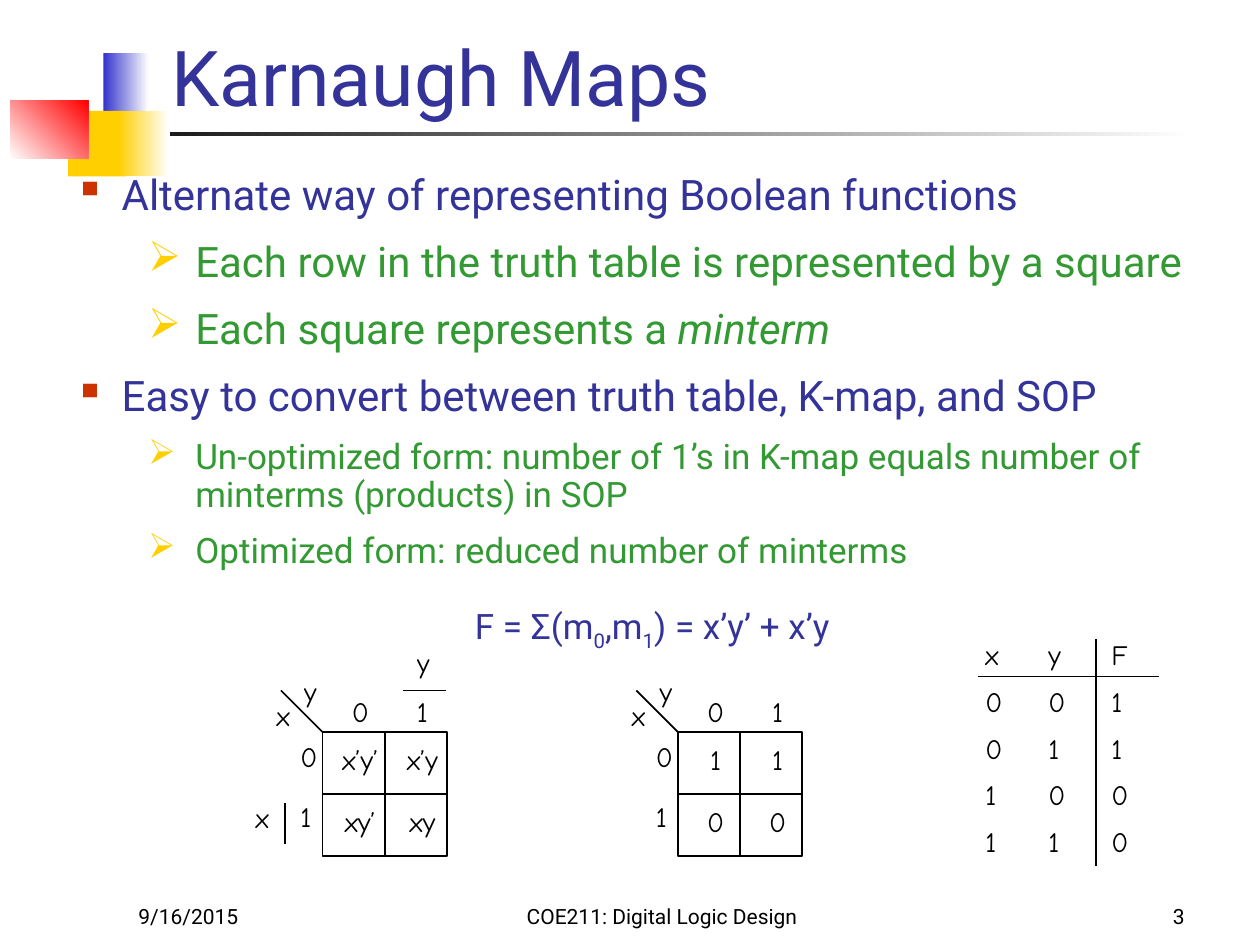
from itertools import product

from lxml import etree
from pptx import Presentation
from pptx import util as u
from pptx.dml.color import RGBColor
from pptx.enum import shapes, text
from pptx.oxml.ns import qn

COLUMNS, ROWS = 100, 75
UNIT = u.Inches(10) / COLUMNS
CELL = 4.93
BLACK, NAVY, GREEN, GOLD, RUST, WHITE = "000000", "333399", "339933", "FFCF01", "CC3300", "FFFFFF"
LEFT, CENTER, RIGHT = text.PP_ALIGN.LEFT, text.PP_ALIGN.CENTER, text.PP_ALIGN.RIGHT


def color(code):
    return RGBColor.from_string(code)


def grid(*lengths):
    return [u.Emu(round(length * UNIT)) for length in lengths]


def style(paragraph, size, face, code, align=LEFT):
    paragraph.alignment = align
    font = paragraph.font
    font.size, font.name = u.Pt(size), face
    font.color.rgb = color(code)


def block(parent, place, fill=None, fade=None, angle=0):
    shape = parent.add_shape(shapes.MSO_SHAPE.RECTANGLE, *grid(*place))
    shape.shadow.inherit = False
    if fade:
        shape.fill.gradient()
        shape.fill.gradient_angle = angle
        for stop, code in zip(shape.fill.gradient_stops, (fill, fade)):
            stop.color.rgb = color(code)
    elif fill:
        shape.fill.solid()
        shape.fill.fore_color.rgb = color(fill)
    else:
        shape.fill.background()
    if fill:
        shape.line.fill.background()
    else:
        shape.line.color.rgb = color(BLACK)
        shape.line.width = u.Pt(1)
    return shape


def rule(parent, *ends):
    line = parent.add_connector(shapes.MSO_CONNECTOR.STRAIGHT, *grid(*ends))
    line.line.color.rgb = color(BLACK)
    line.line.width = u.Pt(1)
    etree.SubElement(line._element.spPr, qn("a:effectLst"))
    return line


def frame(parent, place, inset=(1, 0.5), wrap=True, anchor=text.MSO_ANCHOR.TOP):
    body = parent.add_textbox(*grid(*place)).text_frame
    body.word_wrap = wrap
    body.vertical_anchor = anchor
    body.margin_left, body.margin_top = grid(*inset)
    body.margin_right, body.margin_bottom = grid(*inset)
    return body


def caption(parent, place, words, size, code=BLACK, align=LEFT):
    paragraph = frame(parent, place, anchor=text.MSO_ANCHOR.BOTTOM).paragraphs[0]
    paragraph.text = words
    style(paragraph, size, "Roboto", code, align)


def mark(parent, place, words, align=LEFT, spacing=15.8):
    paragraph = frame(parent, place, (0.2, 0.3), wrap=False).paragraphs[0]
    paragraph.text = words
    paragraph.line_spacing = u.Pt(spacing)
    style(paragraph, 16, "Comic Neue", BLACK, align)


def outline(parent, place, points):
    body = frame(parent, place, (0, 0))
    for index, (level, size, words, emphasis) in enumerate(points):
        paragraph = body.add_paragraph() if index else body.paragraphs[0]
        paragraph.level = level
        paragraph.line_spacing = 0.9
        if index:
            paragraph.space_before = u.Pt(round(size * 0.52, 1))
        bullet, bullet_color, code, indent = (("▪", RUST, NAVY, 3.75), ("➢", GOLD, GREEN, 9.6))[level]
        properties = paragraph._p.get_or_add_pPr()
        margin, hanging = grid(indent, -3.75)
        properties.set("marL", str(margin))
        properties.set("indent", str(hanging))
        tint = etree.SubElement(properties, qn("a:buClr"))
        etree.SubElement(tint, qn("a:srgbClr"), val=bullet_color)
        etree.SubElement(properties, qn("a:buChar"), char=bullet)
        style(paragraph, size, "Roboto", code)
        paragraph.add_run().text = words
        if emphasis:
            run = paragraph.add_run()
            run.text = emphasis
            run.font.italic = True


def truth_table(slide, rows):
    group = slide.shapes.add_group_shape().shapes
    body = frame(group, (78, 50.5, 14.8, 18.7), (0.2, 0.3), wrap=False)
    for index, row in enumerate(rows):
        paragraph = body.add_paragraph() if index else body.paragraphs[0]
        paragraph.line_spacing = u.Pt(17.8)
        if index:
            paragraph.space_before = u.Pt(8.9)
        tabs = etree.SubElement(paragraph._p.get_or_add_pPr(), qn("a:tabLst"))
        for stop in grid(5, 10):
            etree.SubElement(tabs, qn("a:tab"), pos=str(stop), algn="l")
        paragraph.add_run().text = "\t".join(row)
        style(paragraph, 16, "Comic Neue", BLACK)
    rule(group, 77.6, 53.7, 92, 53.7)
    rule(group, 87, 50.7, 87, 68.7)


def karnaugh_map(slide, left, minterms):
    top = 58.1
    group = slide.shapes.add_group_shape().shapes
    for index in range(2):
        mark(group, (left + index * CELL, top - 2.8, 6, 3.6), str(index), CENTER)
        mark(group, (left - 1.95, top + 0.8 + index * 4.7, 6, 3.6), str(index))
    mark(group, (left - 1.65, top - 4.4, 6.3, 3.6), "y")
    mark(group, (left - 3.85, top - 2.5, 6.3, 3.6), "x")
    for (row, column), term in zip(product(range(2), repeat=2), minterms):
        mark(group, (left + column * CELL, top + 0.7 + row * CELL, 6, 5.1), term, CENTER, 17.8)
    border = block(group, (left, top, 2 * CELL, 2 * CELL))
    for start, end, ends in (
        (0, 2, (left + CELL, top, left + CELL, top + 2 * CELL)),
        (3, 1, (left + 2 * CELL, top + CELL, left, top + CELL)),
    ):
        divider = rule(group, *ends)
        divider.begin_connect(border, start)
        divider.end_connect(border, end)
    rule(group, left, top, left - 3.3, top - 3.3)
    return group


def formula(slide, place, pieces):
    paragraph = frame(slide.shapes, place, wrap=False).paragraphs[0]
    style(paragraph, 20, "Roboto", NAVY)
    for words, lowered in pieces:
        run = paragraph.add_run()
        run.text = words
        if lowered:
            run._r.get_or_add_rPr().set("baseline", "-25000")


def main():
    deck = Presentation()
    deck.slide_width, deck.slide_height = grid(COLUMNS, ROWS)
    slide = deck.slides.add_slide(deck.slide_layouts[6])
    canvas = slide.shapes

    block(canvas, (13.5, 10.5, 81.3, 0.3), "1C1C1C", WHITE)
    block(canvas, (8.2, 4.2, 3.6, 5.2), "3333CC", WHITE)
    block(canvas, (5.4, 8.8, 4.6, 5.2), GOLD)
    block(canvas, (9.4, 8.8, 4, 5.2), GOLD, WHITE)
    block(canvas, (0.8, 8, 6.2, 4.6), WHITE, "FF0000", 45)

    caption(canvas, (12.6, 0.8, 85.2, 9.4), "Karnaugh Maps", 44, NAVY)
    caption(canvas, (10, 69.2, 20.8, 5), "9/16/2015", 12)
    caption(canvas, (74.2, 69.2, 20.8, 5), "3", 12, align=RIGHT)
    caption(canvas, (36.7, 69.2, 31.7, 5), "COE211: Digital Logic Design", 12, align=CENTER)

    outline(canvas, (5.9, 13.8, 89.8, 28.8), (
        (0, 24, "Alternate way of representing Boolean functions", ""),
        (1, 24, "Each row in the truth table is represented by a square", ""),
        (1, 24, "Each square represents a ", "minterm"),
        (0, 24, "Easy to convert between truth table, K-map, and SOP", ""),
        (1, 20, "Un-optimized form: number of 1’s in K-map equals number of minterms (products) in SOP", ""),
        (1, 20, "Optimized form: reduced number of minterms", ""),
    ))

    truth_table(slide, ("xyF", "001", "011", "100", "110"))
    karnaugh_map(slide, 53.8, "1100")
    labelled = karnaugh_map(slide, 25.6, ("x’y’", "x’y", "xy’", "xy"))
    rule(labelled, 22.6, 63.7, 22.6, 67)
    mark(labelled, (20.1, 63.7, 6.3, 3.6), "x")
    mark(canvas, (32.9, 51.4, 6.3, 3.6), "y")
    rule(canvas, 32, 54.8, 35.4, 54.8)
    formula(slide, (36.7, 47.5, 34.1, 4.4), (
        ("F = Σ(m", False), ("0", True), (",m", False), ("1", True), (") = x’y’ + x’y", False),
    ))
    deck.save("out.pptx")


if __name__ == "__main__":
    main()
